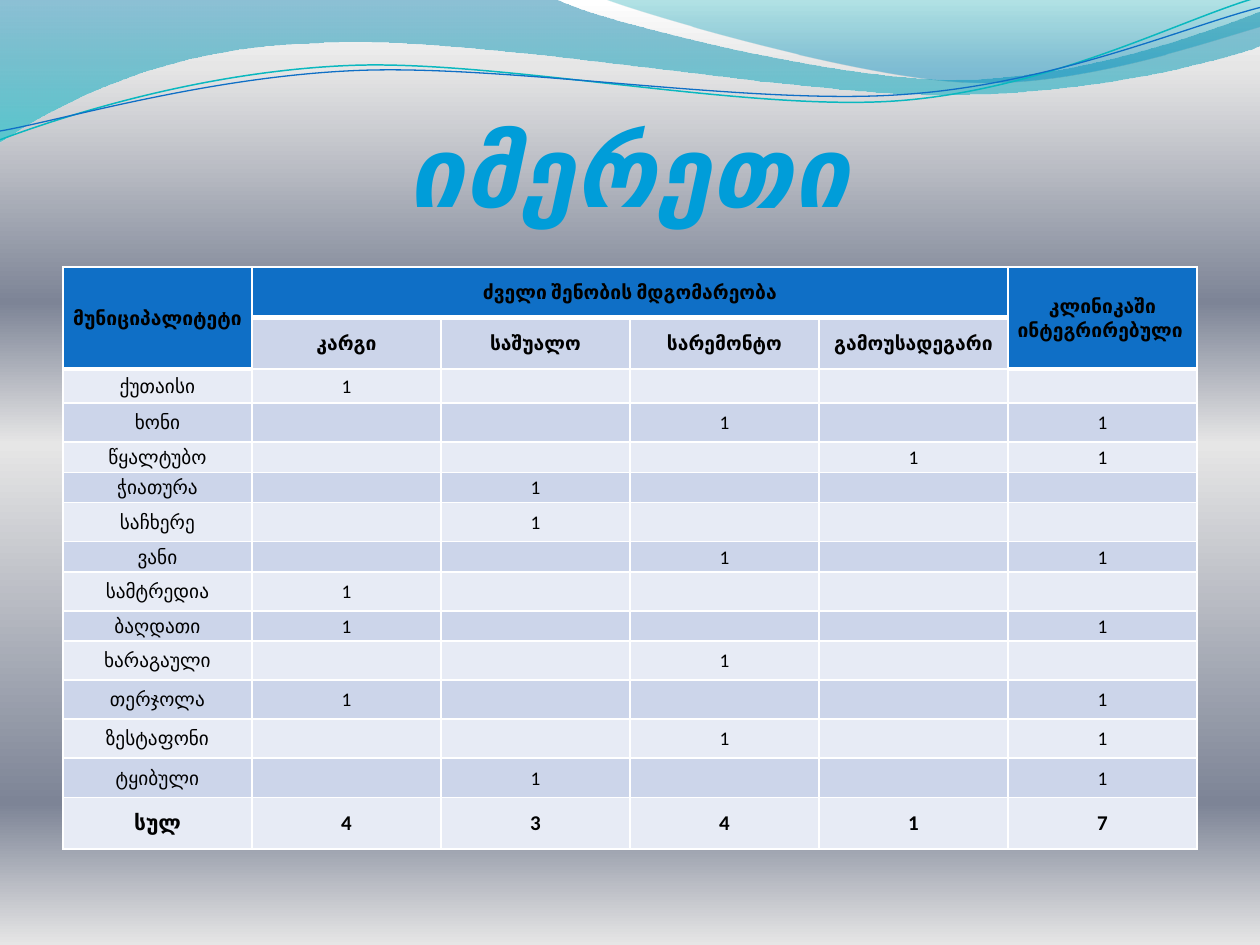
import math
from dataclasses import dataclass

import lxml.etree
import pptx
import pptx.dml.color
import pptx.enum.text
import pptx.oxml.ns
import pptx.util

Inches = pptx.util.Inches
Pt = pptx.util.Pt
RGBColor = pptx.dml.color.RGBColor
qn = pptx.oxml.ns.qn

WHITE = RGBColor(0xFF, 0xFF, 0xFF)
SILVER = RGBColor(0xE6, 0xE6, 0xE6)
SLATE = RGBColor(0x7D, 0x84, 0x96)
DEEP_BLUE = RGBColor(0x00, 0x74, 0xA1)
AQUA = RGBColor(0x00, 0xC6, 0xCF)
TEAL = RGBColor(0x00, 0xA1, 0xA9)
SKY = RGBColor(0x00, 0x8B, 0xBF)
LINE_TEAL = RGBColor(0x0A, 0xB8, 0xBF)
BLUE = RGBColor(0x0F, 0x6F, 0xC6)
TITLE_BLUE = RGBColor(0x00, 0x9D, 0xD9)
BAND_DARK = RGBColor(0xCC, 0xD5, 0xEA)
BAND_LIGHT = RGBColor(0xE7, 0xEB, 0xF5)
BLACK = RGBColor(0, 0, 0)


@dataclass
class Stop:
    pos: int
    color: RGBColor
    alpha: int = 100


@dataclass
class Wave:
    """Segments hold 2 numbers for a line, 6 for a Bézier curve."""
    start: tuple
    segments: list
    stops: tuple = ()
    line: RGBColor = None
    width: float = 0
    rotation: float = 0


@dataclass
class Row:
    height: float
    cells: tuple


BACKGROUND = (Stop(0, WHITE), Stop(7, SILVER), Stop(32, SLATE),
              Stop(47, SILVER), Stop(85, SLATE), Stop(100, SILVER))

WAVES = [
    Wave((0, 0), [(4.4, -0.01), (4.76, 0.17, 6.64, 0.63, 7.58, 0.63),
                  (8.53, 0.63, 9.58, 0.26, 10, 0.09), (10.01, 0.36),
                  (9.83, 0.44, 8.7, 0.76, 7.46, 0.75),
                  (6.22, 0.75, 3.82, 0.28, 2.57, 0.34),
                  (1.29, 0.36, 0.46, 0.83, -0.01, 1.13)],
         stops=(Stop(0, DEEP_BLUE, 45), Stop(100, AQUA, 55))),
    Wave((4.79, -0.01), [(5.09, 0.11, 6.82, 0.62, 7.69, 0.65),
                         (8.56, 0.69, 9.61, 0.32, 10, 0.21), (10, 0)],
         stops=(Stop(0, TEAL, 30), Stop(80, SKY, 45))),
    Wave((0, 1.11), [(0.48, 0.93, 1.58, 0.57, 2.77, 0.52),
                     (3.95, 0.47, 5.93, 0.89, 7.13, 0.8),
                     (8.33, 0.71, 9.38, 0.15, 9.98, -0.02)],
         line=LINE_TEAL, width=0.85, rotation=357.3),
    Wave((0, 1.04), [(0.47, 0.96, 1.64, 0.61, 2.83, 0.56),
                     (4.03, 0.51, 5.97, 0.84, 7.17, 0.75),
                     (8.36, 0.67, 9.41, 0.21, 10, 0.06)],
         line=BLUE, width=0.75, rotation=357.3),
]

ROWS = [
    Row(0.4, ("მუნიციპალიტეტი", "ძველი შენობის მდგომარეობა", "", "", "",
              "კლინიკაში ინტეგრირებული ")),
    Row(0.41, ("", "კარგი", "საშუალო", "სარემონტო", "გამოუსადეგარი", "")),
    Row(0.27, ("ქუთაისი", "1", "", "", "", "")),
    Row(0.31, ("ხონი", "", "", "1", "", "1")),
    Row(0.24, ("წყალტუბო", "", "", "", "1", "1")),
    Row(0.24, ("ჭიათურა", "", "1", "", "", "")),
    Row(0.31, ("საჩხერე", "", "1", "", "", "")),
    Row(0.24, ("ვანი", "", "", "1", "", "1")),
    Row(0.31, ("სამტრედია", "1", "", "", "", "")),
    Row(0.24, ("ბაღდათი", "1", "", "", "", "1")),
    Row(0.31, ("ხარაგაული", "", "", "1", "", "")),
    Row(0.31, ("თერჯოლა", "1", "", "", "", "1")),
    Row(0.31, ("ზესტაფონი", "", "", "1", "", "1")),
    Row(0.31, ("ტყიბული", "", "1", "", "", "1")),
    Row(0.41, ("სულ", "4", "3", "4", "1", "7")),
]
MERGES = [((0, 0), (1, 0)), ((0, 1), (0, 4)), ((0, 5), (1, 5))]


def add_solid(parent, color: RGBColor) -> None:
    fill = lxml.etree.SubElement(parent, qn("a:solidFill"))
    lxml.etree.SubElement(fill, qn("a:srgbClr"), val=str(color))


def set_gradient(fill, parent, stops: tuple) -> None:
    """Fill from top to bottom with any number of stops."""
    fill.gradient()
    grad = next(parent.iter(qn("a:gradFill")))
    for child in list(grad):
        grad.remove(child)
    gs_list = lxml.etree.SubElement(grad, qn("a:gsLst"))
    for stop in stops:
        gs = lxml.etree.SubElement(gs_list, qn("a:gs"), pos=str(stop.pos * 1000))
        clr = lxml.etree.SubElement(gs, qn("a:srgbClr"), val=str(stop.color))
        if stop.alpha < 100:
            lxml.etree.SubElement(clr, qn("a:alpha"), val=str(stop.alpha * 1000))
    lxml.etree.SubElement(grad, qn("a:lin"), ang="5400000", scaled="0")


def turn(points: list, degrees: float) -> list:
    """Turn points clockwise about the middle of their ends."""
    cx, cy = [(a + b) / 2 for a, b in zip(points[0], points[-1])]
    cos, sin = math.cos(math.radians(degrees)), math.sin(math.radians(degrees))
    return [(cx + (x - cx) * cos - (y - cy) * sin,
             cy + (x - cx) * sin + (y - cy) * cos) for x, y in points]


def bend(sp, segments: list) -> None:
    """Join each curve's three line steps into one Bézier step."""
    steps = list(sp._element.iter(qn("a:lnTo")))
    for seg in segments:
        group = [steps.pop(0) for _ in range(len(seg) // 2)]
        if len(group) == 3:
            curve = lxml.etree.Element(qn("a:cubicBezTo"))
            group[0].addprevious(curve)
            for step in group:
                curve.append(step[0])
                step.getparent().remove(step)


def add_wave(s, wave: Wave) -> None:
    points = [wave.start] + [seg[k:k + 2] for seg in wave.segments
                             for k in range(0, len(seg), 2)]
    if wave.rotation:
        points = turn(points, -wave.rotation)
    emu = [(Inches(x), Inches(y)) for x, y in points]
    fb = s.shapes.build_freeform(*emu[0])
    fb.add_line_segments(emu[1:], close=bool(wave.stops))
    sp = fb.convert_to_shape()
    bend(sp, wave.segments)
    sp.shadow.inherit = False
    if wave.stops:
        set_gradient(sp.fill, sp._element, wave.stops)
        sp.line.fill.background()
    else:
        sp.fill.background()
        sp.line.color.rgb = wave.line
        sp.line.width = Pt(wave.width)
        # Rotation acts about the box centre, so keep the ends in place
        mid_y = Inches((points[0][1] + points[-1][1]) / 2)
        arm = sp.top + sp.height // 2 - mid_y
        angle = math.radians(wave.rotation)
        sp.left += round(-arm * math.sin(angle))
        sp.top += round(arm * (math.cos(angle) - 1))
        sp.rotation = wave.rotation


def add_text(tf, text: str, color: RGBColor, **font_format) -> None:
    p = tf.paragraphs[0]
    p.alignment = pptx.enum.text.PP_ALIGN.CENTER
    r = p.add_run()
    r.text = text
    for key, value in font_format.items():
        setattr(r.font, key, value)
    r.font.color.rgb = color


def add_title(s, text: str) -> None:
    tf = s.shapes.add_textbox(Inches(0.5), Inches(0.77), Inches(9), Inches(1.03)).text_frame
    layout = {"word_wrap": True, "margin_left": 0, "margin_right": 0, "margin_bottom": 0,
              "vertical_anchor": pptx.enum.text.MSO_ANCHOR.BOTTOM}
    for key, value in layout.items():
        setattr(tf, key, value)
    add_text(tf, text, TITLE_BLUE, name="Calibri", size=Pt(56), bold=True, italic=True)
    tf.paragraphs[0].runs[0].font._element.set("spc", "50")


def set_borders(cell, widths: dict) -> None:
    tc_pr = cell._tc.get_or_add_tcPr()
    for i, (side, width) in enumerate(widths.items()):
        ln = lxml.etree.Element(qn(f"a:ln{side}"), w=str(Pt(width)))
        add_solid(ln, WHITE)
        tc_pr.insert(i, ln)


def add_status_table(s, rows: list) -> None:
    columns = len(rows[0].cells)
    height = Inches(sum(row.height for row in rows))
    table = s.shapes.add_table(len(rows), columns, Inches(0.5), Inches(2.12),
                               Inches(9), height).table
    layout = {"margin_left": Inches(0.01), "margin_right": Inches(0.01),
              "margin_top": Inches(0.01), "margin_bottom": 0,
              "vertical_anchor": pptx.enum.text.MSO_ANCHOR.MIDDLE}
    last = len(rows) - 1
    for i, row in enumerate(rows):
        table.rows[i].height = Inches(row.height)
        size = 12 if i == last else 11
        for j, text in enumerate(row.cells):
            cell = table.cell(i, j)
            for key, value in layout.items():
                setattr(cell, key, value)
            in_header = i == 0 or (i == 1 and j in (0, columns - 1))
            cell.fill.solid()
            cell.fill.fore_color.rgb = BLUE if in_header else BAND_DARK if i % 2 else BAND_LIGHT
            below_header = (i == 1 and not in_header) or (i == 2 and j in (0, columns - 1))
            set_borders(cell, {"L": 1, "R": 1, "T": 3 if below_header else 1,
                               "B": 3 if in_header else 1})
            if text:
                add_text(cell.text_frame, text, BLACK, name="Calibri" if j else "Roboto",
                         size=Pt(size), bold=i in (0, 1, last))
            else:  # keep empty cells as low as their row
                lxml.etree.SubElement(cell.text_frame.paragraphs[0]._p,
                                      qn("a:endParaRPr"), sz=str(size * 100))
    for first, final in MERGES:
        table.cell(*first).merge(table.cell(*final))


def main() -> None:
    prs = pptx.Presentation()
    prs.slide_width, prs.slide_height = Inches(10), Inches(7.5)
    s = prs.slides.add_slide(prs.slide_layouts[6])
    # Backdrop
    set_gradient(s.background.fill, s._element, BACKGROUND)
    for wave in WAVES:
        add_wave(s, wave)
    # Content
    add_title(s, "იმერეთი")
    add_status_table(s, ROWS)
    prs.save("out.pptx")


if __name__ == "__main__":
    main()
